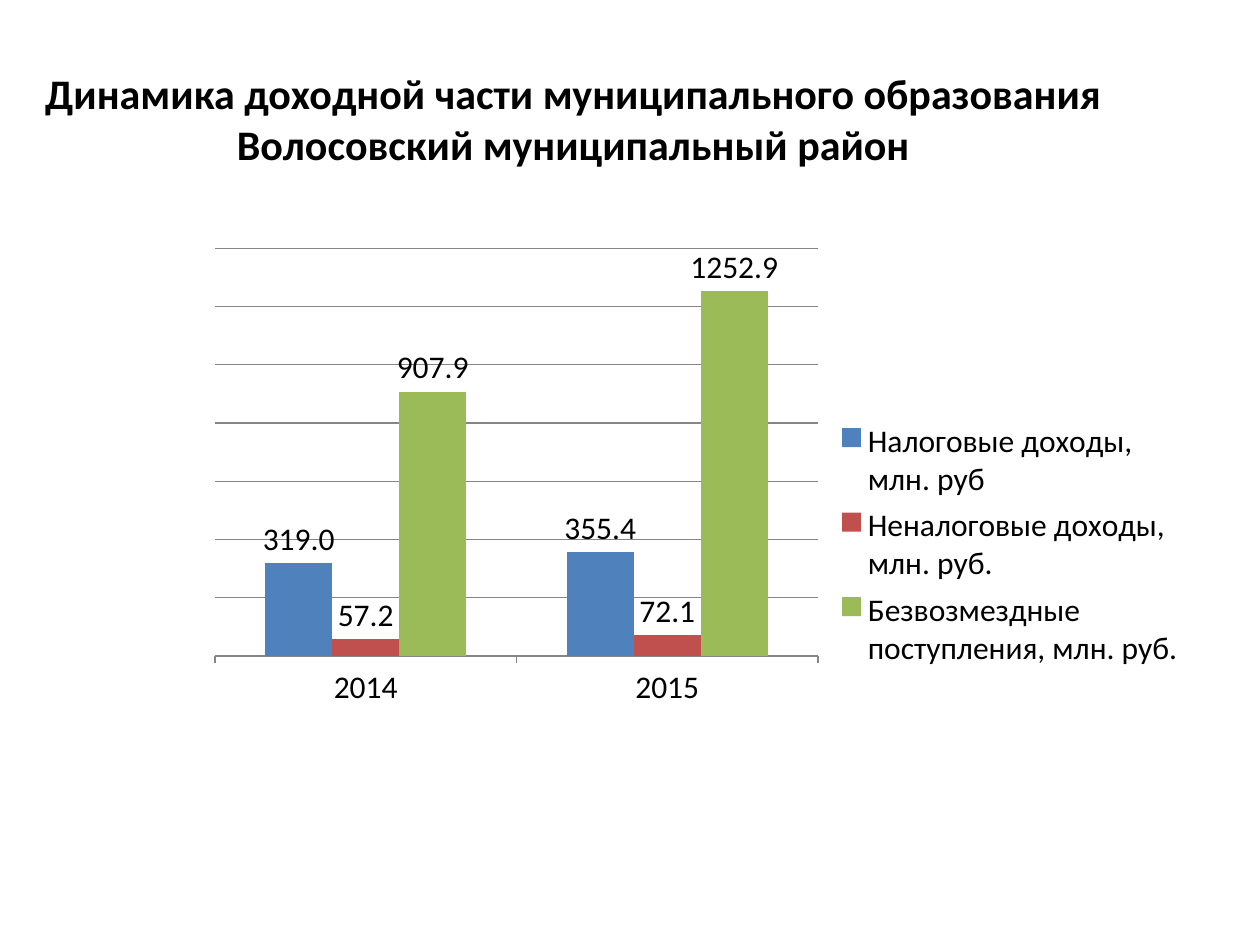
from lxml import etree
from pptx import Presentation
from pptx.chart.data import CategoryChartData
from pptx.dml.color import RGBColor
from pptx.enum.chart import XL_CHART_TYPE, XL_LABEL_POSITION, XL_LEGEND_POSITION, XL_TICK_MARK
from pptx.enum.text import MSO_ANCHOR, PP_ALIGN
from pptx.oxml.ns import qn
from pptx.util import Inches, Pt

COLUMNS = XL_CHART_TYPE.COLUMN_CLUSTERED
ABOVE = XL_LABEL_POSITION.OUTSIDE_END
RIGHT = XL_LEGEND_POSITION.RIGHT
TICK_OUT, TICK_NONE = XL_TICK_MARK.OUTSIDE, XL_TICK_MARK.NONE
MIDDLE, CENTER = MSO_ANCHOR.MIDDLE, PP_ALIGN.CENTER

COLORS = {"text": "000000", "grid": "868686", "tax": "4F81BD",
          "non_tax": "C0504D", "grants": "9BBB59"}
YEARS = ["2014", "2015"]
INCOME = [
    ("Налоговые доходы, млн. руб", "tax", (319.0, 355.4)),
    ("Неналоговые доходы, млн. руб.", "non_tax", (57.2, 72.1)),
    ("Безвозмездные поступления, млн. руб.", "grants", (907.9, 1252.9)),
]


def color(name):
    return RGBColor.from_string(COLORS[name])


def set_all(target, values):
    for name, value in values.items():
        setattr(target, name, value)


def set_layout(element, before, inner=False, **shares):
    """Place a chart part by shares of the chart's size."""
    for old in element.findall(qn("c:layout")):
        element.remove(old)
    layout = etree.Element(qn("c:layout"))
    manual = etree.SubElement(layout, qn("c:manualLayout"))
    settings = {"layoutTarget": "inner"} if inner else {}
    settings.update(xMode="edge", yMode="edge", **shares)
    for name, value in settings.items():
        etree.SubElement(manual, qn(f"c:{name}")).set("val", str(value))
    if before is None:
        element.insert(0, layout)
    else:
        element.find(qn(before)).addnext(layout)


class SlideBuilder:
    """Holds the style and the current slide; places are shares of its size."""

    font = "Calibri"

    def __init__(self, deck):
        self.width, self.height = deck.slide_width, deck.slide_height
        self.page = deck.slides.add_slide(deck.slide_layouts[6])

    def place(self, left, top, width, height):
        return (int(left * self.width), int(top * self.height),
                int(width * self.width), int(height * self.height))

    def style(self, font, size, bold=False):
        set_all(font, {"name": self.font, "size": Pt(size), "bold": bold})
        font.color.rgb = color("text")

    def title(self, text, *area):
        box = self.page.shapes.add_textbox(*self.place(*area))
        set_all(box.text_frame, {"word_wrap": True, "vertical_anchor": MIDDLE})
        para = box.text_frame.paragraphs[0]
        para.alignment = CENTER
        span = para.add_run()
        span.text = text
        self.style(span.font, 24, bold=True)

    def column_chart(self, categories, rows, *area):
        data = CategoryChartData(number_format="#,##0.0")
        data.categories = categories
        for name, _, values in rows:
            data.add_series(name, values)
        frame = self.page.shapes.add_chart(COLUMNS, *self.place(*area), data)
        chart = frame.chart
        set_all(chart, {"has_title": False, "has_legend": True})
        self.style(chart.font, 18)

        # Columns and their labels
        plot = chart.plots[0]
        set_all(plot, {"gap_width": 150, "overlap": 0, "vary_by_categories": False})
        for series, (_, fill, _) in zip(plot.series, rows):
            series.format.fill.solid()
            series.format.fill.fore_color.rgb = color(fill)
            set_all(series.data_labels, {
                "show_value": True, "position": ABOVE,
                "number_format": "0.0", "number_format_is_linked": False})

        # Axes and gridlines
        set_all(chart.value_axis, {
            "visible": False, "has_major_gridlines": True,
            "minimum_scale": 0, "maximum_scale": 1400, "major_unit": 200})
        set_all(chart.category_axis, {
            "major_tick_mark": TICK_OUT, "minor_tick_mark": TICK_NONE})
        for part in (chart.value_axis.major_gridlines, chart.category_axis):
            part.format.line.color.rgb = color("grid")
            part.format.line.width = Pt(0.75)

        # Legend and plot placement
        set_all(chart.legend, {"position": RIGHT, "include_in_layout": False})
        set_layout(chart.legend._element, "c:legendPos", x=0.68, y=0.31, w=0.31, h=0.42)
        plot_area = plot._element.getparent()
        set_layout(plot_area, None, inner=True, x=0.134, y=0.045, w=0.532, h=0.654)


def main():
    deck = Presentation()
    deck.slide_width, deck.slide_height = Inches(10), Inches(7.5)
    builder = SlideBuilder(deck)
    builder.title("Динамика доходной части муниципального образования "
                  "Волосовский муниципальный район", 0.02, 0.04, 0.87, 0.17)
    builder.column_chart(YEARS, INCOME, 0.05, 0.233, 0.9, 0.66)
    deck.save("out.pptx")


if __name__ == "__main__":
    main()
